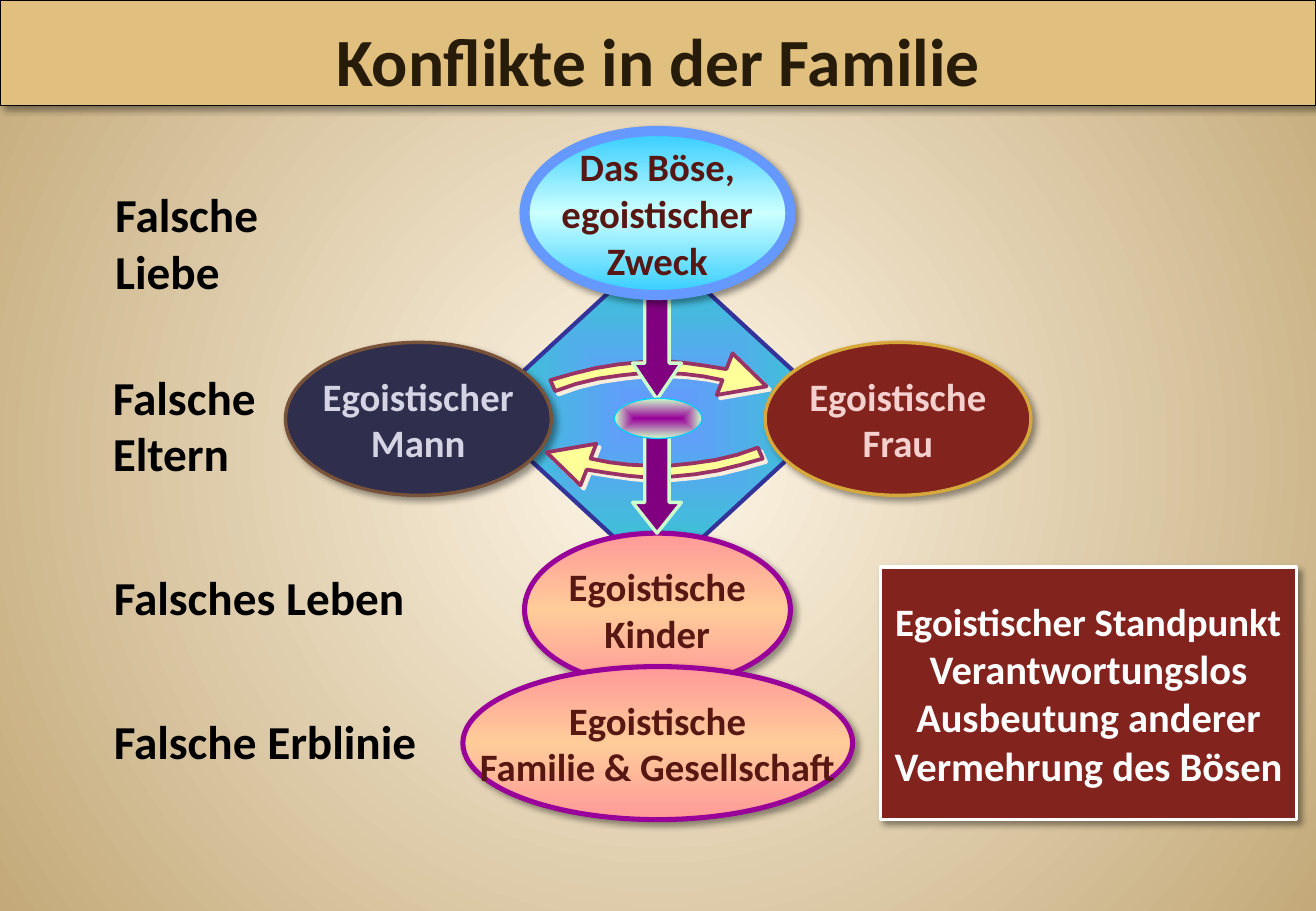
from lxml.etree import SubElement
from pptx import Presentation
from pptx.dml.color import RGBColor
from pptx.enum.shapes import MSO_SHAPE as Preset
from pptx.enum.text import MSO_ANCHOR as Anchor, PP_ALIGN as Align
from pptx.oxml.ns import qn
from pptx.util import Cm, Pt

FONT = "Calibri"
BLACK = RGBColor(0x00, 0x00, 0x00)
WHITE = RGBColor(0xFF, 0xFF, 0xFF)
CREAM = RGBColor(0xFF, 0xF7, 0xE8)
SAND = RGBColor(0xC4, 0xAA, 0x7A)
BANNER = RGBColor(0xE1, 0xBF, 0x7E)
TITLE_BROWN = RGBColor(0x26, 0x1C, 0x09)
TEXT_RED = RGBColor(0x57, 0x17, 0x13)
DARK_RED = RGBColor(0x82, 0x23, 0x1D)
PALE_RED = RGBColor(0xF4, 0xD0, 0xCE)
GOLD = RGBColor(0xD6, 0xA7, 0x3B)
NIGHT = RGBColor(0x2F, 0x2E, 0x4D)
PALE_NIGHT = RGBColor(0xD4, 0xD4, 0xE5)
BROWN = RGBColor(0x79, 0x53, 0x39)
BLUE = RGBColor(0x66, 0x99, 0xFF)
TEAL = RGBColor(0x33, 0xCC, 0xCC)
INDIGO = RGBColor(0x33, 0x33, 0x99)
SKY = RGBColor(0x33, 0xCC, 0xFF)
ICE = RGBColor(0xCC, 0xFF, 0xFF)
CYAN = RGBColor(0x00, 0xCC, 0xFF)
PINK = RGBColor(0xFF, 0x99, 0x99)
PEACH = RGBColor(0xFF, 0xCC, 0x99)
VIOLET = RGBColor(0x99, 0x00, 0x99)
PURPLE = RGBColor(0x80, 0x00, 0x80)
MINT = RGBColor(0xCC, 0xFF, 0xCC)
YELLOW = RGBColor(0xFF, 0xFF, 0x99)
BERRY = RGBColor(0x99, 0x33, 0x66)
ARROW_SHADOW = RGBColor(0xF7, 0xEE, 0xDD)

SLIDE_WIDTH, SLIDE_HEIGHT = 27.52, 19.05
OVAL_WIDTH, OVAL_HEIGHT = 5.56, 3.2
# The lower curved arrow is the upper one turned by 180 degrees.
TURN_X, TURN_Y = 27.46, 17.54
CURVED_ARROW = [
    (15.11, 7.95), (14.71, 7.87), (14.3, 7.82), (13.87, 7.8), (13.46, 7.8),
    (12.98, 7.85), (12.5, 7.92), (12.04, 8.03), (11.61, 8.18), (11.51, 7.95),
    (11.96, 7.82), (12.45, 7.7), (12.93, 7.62), (13.44, 7.57), (13.89, 7.55),
    (14.33, 7.59), (14.76, 7.65), (15.19, 7.72), (15.32, 7.39), (16.03, 8.08),
    (14.99, 8.26),
]


def add_color(parent, color):
    return SubElement(parent, qn("a:srgbClr"), val=str(color))


def set_gradient(owner, colors, path=None):
    """Spread colors evenly, top to bottom or outwards from the centre."""
    fill = owner.fill
    fill.gradient()
    gradient = owner.element.find(".//" + qn("a:gradFill")) if hasattr(owner, "element") else None
    if gradient is None:
        gradient = fill._xPr.find(qn("a:gradFill"))
    for child in list(gradient):
        gradient.remove(child)
    stops = SubElement(gradient, qn("a:gsLst"))
    for index, color in enumerate(colors):
        position = 100000 * index // (len(colors) - 1)
        add_color(SubElement(stops, qn("a:gs"), pos=str(position)), color)
    if path:
        shade = SubElement(gradient, qn("a:path"), path=path)
        SubElement(shade, qn("a:fillToRect"), l="50000", t="50000", r="50000", b="50000")
    else:
        SubElement(gradient, qn("a:lin"), ang="5400000", scaled="0")


def add_shadow(shape, color=BLACK, opacity=40, blur=4, distance=3):
    effects = shape.element.spPr.find(qn("a:effectLst"))
    shadow = SubElement(effects, qn("a:outerShdw"), blurRad=str(Pt(blur)),
                        dist=str(Pt(distance)), dir="2700000", rotWithShape="0")
    SubElement(add_color(shadow, color), qn("a:alpha"), val=str(opacity * 1000))


def style_shape(shape, fill, line, line_width, path=None):
    """Take one fill color, or a list of colors for a gradient."""
    if isinstance(fill, list):
        set_gradient(shape, fill, path)
    else:
        shape.fill.solid()
        shape.fill.fore_color.rgb = fill
    shape.line.color.rgb = line
    shape.line.width = Pt(line_width)
    shape.shadow.inherit = False


def add_preset(page, preset, place, fill, line, line_width, path=None):
    shape = page.shapes.add_shape(preset, *map(Cm, place))
    style_shape(shape, fill, line, line_width, path)
    return shape


def write_lines(shape, lines, color, sizes, align=Align.CENTER):
    frame = shape.text_frame
    frame.text = "\n".join(lines)
    for para, size in zip(frame.paragraphs, sizes):
        para.alignment = align
        para.font.name = FONT
        para.font.size = Pt(size)
        para.font.bold = True
        para.font.color.rgb = color


def add_panel(page, preset, place, fill, line, line_width, lines, color, sizes):
    """Add a shadowed shape with centred, unwrapped text."""
    panel = add_preset(page, preset, place, fill, line, line_width)
    add_shadow(panel)
    write_lines(panel, lines, color, sizes)
    panel.text_frame.word_wrap = False
    panel.text_frame.vertical_anchor = Anchor.MIDDLE
    return panel


def add_oval(page, left, top, fill, line, line_width, lines, color,
             width=OVAL_WIDTH, height=OVAL_HEIGHT):
    add_panel(page, Preset.OVAL, (left, top, width, height), fill, line,
              line_width, lines, color, [23] * len(lines))


def add_label(page, left, top, width, lines):
    box = page.shapes.add_textbox(Cm(left), Cm(top), Cm(width), Cm(0.25 + 1.2 * len(lines)))
    box.text_frame.word_wrap = True
    write_lines(box, lines, BLACK, [28] * len(lines), Align.LEFT)


def add_curved_arrow(page, points):
    builder = page.shapes.build_freeform(*map(Cm, points[0]))
    builder.add_line_segments([(Cm(x), Cm(y)) for x, y in points[1:]], close=True)
    arrow = builder.convert_to_shape()
    style_shape(arrow, YELLOW, BERRY, 2.25)
    add_shadow(arrow, ARROW_SHADOW, 100, 0, 2.8)


def add_down_arrow(page, top, height, head):
    arrow = add_preset(page, Preset.DOWN_ARROW, (13.23, top, 1.02, height), PURPLE, MINT, 2)
    arrow.adjustments[0] = 0.5
    arrow.adjustments[1] = head


def add_title(page, text):
    banner = add_preset(page, Preset.RECTANGLE, (0, 0, SLIDE_WIDTH, 2.21), BANNER, BLACK, 0.75)
    add_shadow(banner)
    write_lines(banner, [text], TITLE_BROWN, [40])
    banner.text_frame.vertical_anchor = Anchor.BOTTOM


def main():
    deck = Presentation()
    deck.slide_width, deck.slide_height = Cm(SLIDE_WIDTH), Cm(SLIDE_HEIGHT)
    page = deck.slides.add_slide(deck.slide_layouts[6])
    set_gradient(page.background, [CREAM, SAND], "circle")

    add_preset(page, Preset.DIAMOND, (10.01, 5.16, 7.52, 6.93), [BLUE, TEAL], INDIGO, 2.5, "shape")
    add_oval(page, 5.97, 7.16, NIGHT, BROWN, 2, ["Egoistischer", "Mann"], PALE_NIGHT)
    add_oval(page, 16, 7.16, DARK_RED, GOLD, 2, ["Egoistische", "Frau"], PALE_RED)
    add_oval(page, 10.97, 11.15, [PINK, PEACH, PINK], VIOLET, 3,
             ["Egoistische", "Kinder"], TEXT_RED)
    add_curved_arrow(page, CURVED_ARROW)
    add_curved_arrow(page, [(TURN_X - x, TURN_Y - y) for x, y in CURVED_ARROW])
    add_oval(page, 9.68, 13.94, [PINK, PEACH, PINK], VIOLET, 3,
             ["Egoistische", "Familie & Gesellschaft"], TEXT_RED, width=8.15)

    add_label(page, 2.16, 3.76, 6.5, ["Falsche", "Liebe"])
    add_label(page, 2.11, 7.57, 4.78, ["Falsche", "Eltern"])
    add_label(page, 2.13, 11.76, 8.89, ["Falsches Leben"])
    add_label(page, 2.13, 14.76, 8.89, ["Falsche Erblinie"])

    add_down_arrow(page, 8.76, 2.39, 0.63)
    add_down_arrow(page, 5.56, 2.79, 0.74)
    add_oval(page, 10.97, 2.74, [SKY, ICE, SKY], BLUE, 6,
             ["Das Böse,", "egoistischer", "Zweck"], TEXT_RED, height=3.43)
    add_preset(page, Preset.OVAL, (12.85, 8.33, 1.83, 0.84), [VIOLET, MINT], CYAN, 0.75, "shape")

    summary = ["Egoistischer Standpunkt", "Verantwortungslos",
               "Ausbeutung anderer", "Vermehrung des Bösen"]
    add_panel(page, Preset.RECTANGLE, (18.42, 11.86, 8.69, 5.28), DARK_RED, WHITE, 2,
              summary, WHITE, [23, 24, 24, 24])
    add_title(page, "Konflikte in der Familie")
    deck.save("out.pptx")


if __name__ == "__main__":
    main()
